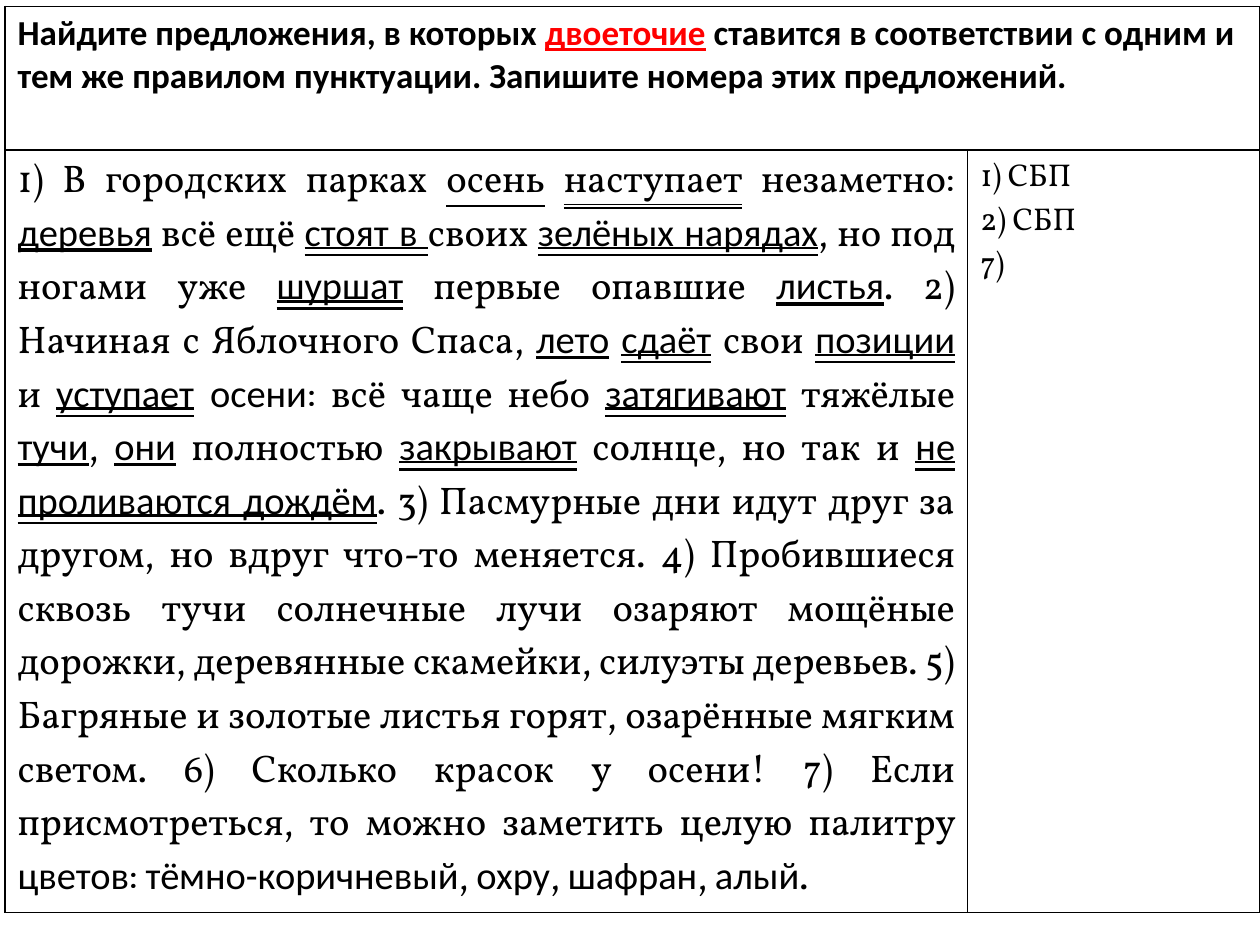
from lxml.etree import SubElement
from pptx import Presentation
from pptx.dml.color import RGBColor
from pptx.enum.text import MSO_TEXT_UNDERLINE_TYPE as Underline, PP_ALIGN
from pptx.oxml.ns import qn
from pptx.util import Inches, Pt

SANS, SERIF = "Calibri", "Vollkorn"
ONE, TWO = Underline.SINGLE_LINE, Underline.DOUBLE_LINE


def add_run(p, text, font, size, underline=None, color="000000", bold=False):
    r = p.add_run()
    r.text = text
    r.font.name, r.font.size, r.font.bold = font, Pt(size), bold
    r.font.underline = underline
    r.font.color.rgb = RGBColor.from_string(color)


def format_cell(cell):
    """Clear the fill and draw a thin black border on all four sides."""
    tcPr = cell._tc.get_or_add_tcPr()
    for side in ("a:lnL", "a:lnR", "a:lnT", "a:lnB"):
        ln = SubElement(tcPr, qn(side), w=str(Pt(1)))
        SubElement(SubElement(ln, qn("a:solidFill")), qn("a:srgbClr"), val="000000")
    cell.fill.background()


prs = Presentation()
prs.slide_width, prs.slide_height = Inches(10), Inches(7.5)
s = prs.slides.add_slide(prs.slide_layouts[6])

cols, rows = (7.64, 2.32), (1.14, 5.8)
table = s.shapes.add_table(len(rows), len(cols), Inches(0.04), Inches(0.05),
                           Inches(sum(cols)), Inches(sum(rows))).table
table.first_row = table.horz_banding = False
for col, width in zip(table.columns, cols):
    col.width = Inches(width)
for row, height in zip(table.rows, rows):
    row.height = Inches(height)
for cell in table.iter_cells():
    format_cell(cell)
table.cell(0, 0).merge(table.cell(0, 1))

# Task
p = table.cell(0, 0).text_frame.paragraphs[0]
add_run(p, "Найдите предложения, в которых ", SANS, 20, bold=True)
add_run(p, "двоеточие", SANS, 20, ONE, "FF0000", True)
add_run(p, " ставится в соответствии с одним и тем же правилом пунктуации. "
           "Запишите номера этих предложений.", SANS, 20, bold=True)

# Sentences: subjects have one line under them, predicates two
sentences = [
    ("1) В городских парках ", SERIF, None),
    ("осень", SERIF, ONE),
    (" ", SERIF, None),
    ("наступает", SERIF, TWO),
    (" незаметно: ", SERIF, None),
    ("деревья", SANS, ONE),
    (" всё ещё ", SERIF, None),
    ("стоят в ", SANS, TWO),
    ("своих ", SERIF, None),
    ("зелёных нарядах", SANS, TWO),
    (", но под ногами уже ", SERIF, None),
    ("шуршат", SANS, TWO),
    (" первые опавшие ", SERIF, None),
    ("листья", SANS, ONE),
    (". 2) Начиная с Яблочного Спаса, ", SERIF, None),
    ("лето", SANS, ONE),
    (" ", SERIF, None),
    ("сдаёт", SANS, TWO),
    (" свои ", SERIF, None),
    ("позиции", SANS, TWO),
    (" и ", SERIF, None),
    ("уступает", SANS, TWO),
    (" осени", SANS, None),
    (": всё чаще небо ", SERIF, None),
    ("затягивают", SANS, TWO),
    (" тяжёлые ", SERIF, None),
    ("тучи", SANS, ONE),
    (", ", SERIF, None),
    ("они", SANS, ONE),
    (" полностью ", SERIF, None),
    ("закрывают", SANS, TWO),
    (" солнце, но так и ", SERIF, None),
    ("не проливаются дождём", SANS, TWO),
    (". 3) Пасмурные дни идут друг за другом, но вдруг что-то меняется. "
     "4) Пробившиеся сквозь тучи солнечные лучи озаряют мощёные дорожки, "
     "деревянные скамейки, силуэты деревьев. 5) Багряные и золотые листья горят, "
     "озарённые мягким светом. 6) Сколько красок у осени! 7) Если присмотреться, "
     "то можно заметить целую палитру ", SERIF, None),
    ("цветов", SANS, None),
    (": ", SERIF, None),
    ("тёмно-коричневый", SANS, None),
    (", ", SERIF, None),
    ("охру", SANS, None),
    (", ", SERIF, None),
    ("шафран", SANS, None),
    (", ", SERIF, None),
    ("алый", SANS, None),
    (".", SERIF, None),
]
p = table.cell(1, 0).text_frame.paragraphs[0]
p.alignment = PP_ALIGN.JUSTIFY
for text, font, underline in sentences:
    add_run(p, text, font, 22, underline)

# Answers: the first number is automatic
tf = table.cell(1, 1).text_frame
p = tf.paragraphs[0]
pPr = p._p.get_or_add_pPr()
pPr.set("marL", "0")
pPr.set("indent", "0")
SubElement(pPr, qn("a:buFont"), typeface=SERIF)
SubElement(pPr, qn("a:buAutoNum"), type="arabicParenR")
add_run(p, " СБП", SERIF, 18)
for text in ("2) СБП", "7)"):
    add_run(tf.add_paragraph(), text, SERIF, 18)

prs.save("out.pptx")
